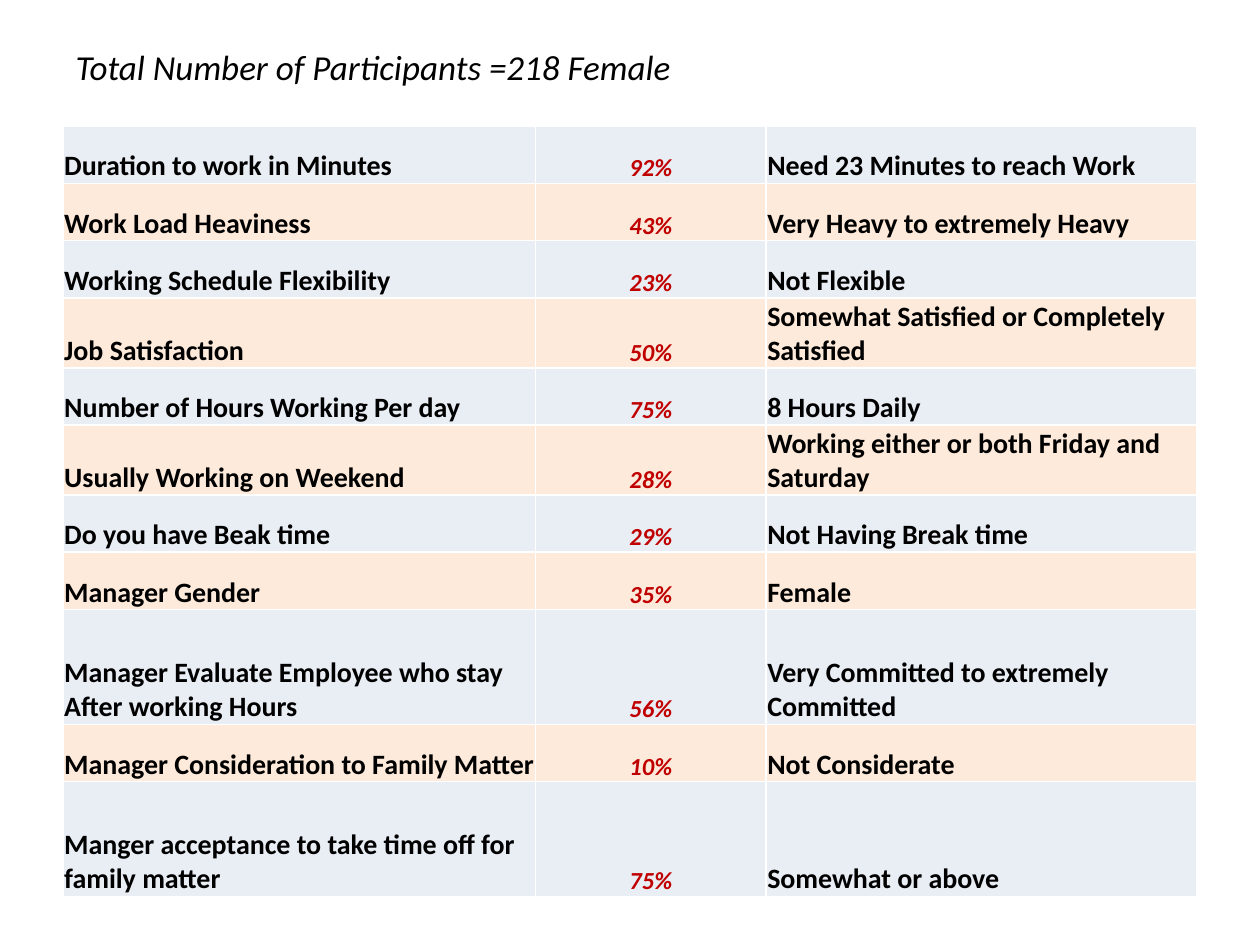
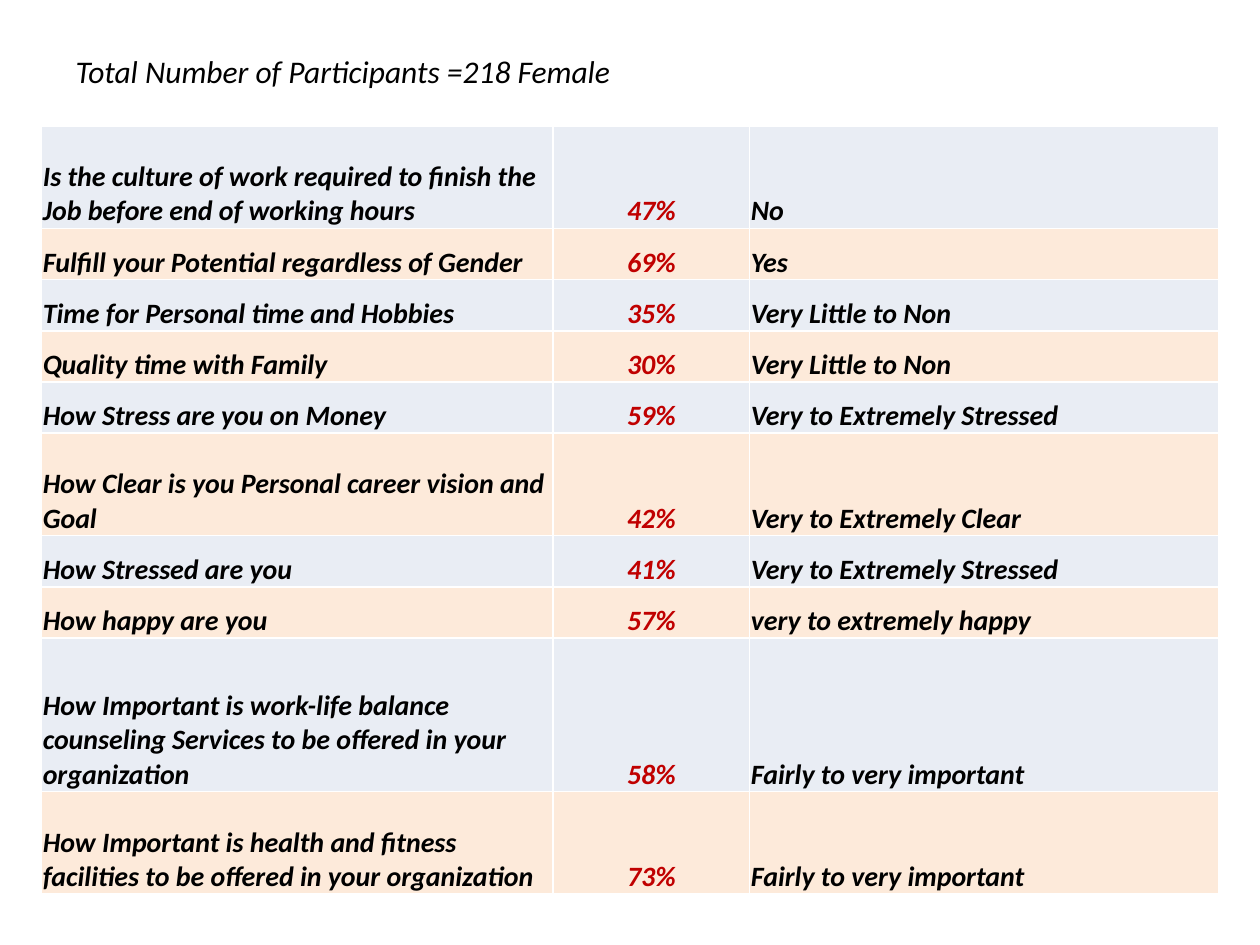
from dataclasses import dataclass

from lxml.etree import SubElement
from pptx import Presentation
from pptx.dml.color import RGBColor
from pptx.enum.text import MSO_ANCHOR, MSO_AUTO_SIZE, PP_ALIGN
from pptx.oxml.ns import qn
from pptx.util import Inches, Pt


@dataclass(frozen=True)
class Theme:
    font: str = "Calibri"
    ink: str = "000000"
    rate: str = "C00000"
    line: str = "FFFFFF"
    bands: tuple = ("E9EDF4", "FDEADA")
    body: int = 16


theme = Theme()


def style(para, size, color, bold, slant, align):
    para.alignment = align
    for run in para.runs:
        font = run.font
        font.name, font.size = theme.font, Pt(size)
        font.bold, font.italic = bold, slant
        font.color.rgb = RGBColor.from_string(color)


def border(cell):
    props = cell._tc.get_or_add_tcPr()
    for side in ("lnL", "lnR", "lnT", "lnB"):
        line = SubElement(props, qn(f"a:{side}"), w=str(Pt(1)))
        fill = SubElement(line, qn("a:solidFill"))
        SubElement(fill, qn("a:srgbClr"), val=theme.line)


# Each row: height in row units, topic, share, answer
work = [
    (1, "Duration to work in Minutes", "92%", "Need 23 Minutes to reach Work"),
    (1, "Work Load Heaviness", "43%", "Very Heavy to extremely Heavy"),
    (1, "Working Schedule Flexibility", "23%", "Not Flexible"),
    (1, "Job Satisfaction", "50%", "Somewhat Satisfied or Completely Satisfied"),
    (1, "Number of Hours Working Per day", "75%", "8 Hours Daily"),
    (1, "Usually Working on Weekend", "28%", "Working either or both Friday and Saturday"),
    (1, "Do you have Beak time", "29%", "Not Having Break time"),
    (1, "Manager Gender", "35%", "Female"),
    (2, "Manager Evaluate Employee who stay After working Hours", "56%",
     "Very Committed to extremely Committed"),
    (1, "Manager Consideration to Family Matter", "10%", "Not Considerate"),
    (2, "Manger acceptance to take time off for family matter", "75%", "Somewhat or above"),
]
life = [
    (2, "Is the culture of work required to finish the Job before end of working hours", "47%", "No"),
    (1, "Fulfill your Potential regardless of Gender", "69%", "Yes"),
    (1, "Time for Personal time and Hobbies", "35%", "Very Little to Non"),
    (1, "Quality time with Family", "30%", "Very Little to Non"),
    (1, "How Stress are you on Money", "59%", "Very to Extremely Stressed"),
    (2, "How Clear is you Personal career vision and Goal", "42%", "Very to Extremely Clear"),
    (1, "How Stressed are you", "41%", "Very to Extremely Stressed"),
    (1, "How happy are you", "57%", "very to extremely happy"),
    (3, "How Important is work-life balance counseling Services to be offered in your organization",
     "58%", "Fairly to very important"),
    (2, "How Important is health and fitness facilities to be offered in your organization",
     "73%", "Fairly to very important"),
]

# Each page: rows, title size, title height, columns, table height, share size, slanted text
pages = [
    (work, 20, 0.45, (3.75, 1.83, 3.42), 5.92, 14, False),
    (life, 18, 0.53, (4.06, 1.56, 3.72), 6.1, 16, True),
]

deck = Presentation()
deck.slide_width, deck.slide_height = Inches(10), Inches(7.5)

for rows, size, tall, cols, depth, small, slant in pages:
    slide = deck.slides.add_slide(deck.slide_layouts[5])

    # Title
    title = slide.shapes.title
    title.left, title.top = Inches(0.5), Inches(0.3)
    title.width, title.height = Inches(9), Inches(tall)
    frame = title.text_frame
    frame.text = "Total Number of Participants =218 Female"
    frame.auto_size = MSO_AUTO_SIZE.NONE
    frame.vertical_anchor = MSO_ANCHOR.MIDDLE
    style(frame.paragraphs[0], size, theme.ink, False, True, PP_ALIGN.LEFT)

    # Table, centred across the slide
    width = Inches(sum(cols))
    table = slide.shapes.add_table(
        len(rows), len(cols), (deck.slide_width - width) // 2, Inches(1),
        width, Inches(depth)).table
    table.first_row = table.horz_banding = False
    for col, wide in zip(table.columns, cols):
        col.width = Inches(wide)
    unit = Inches(depth) // sum(row[0] for row in rows)

    # Banded rows with the share in red
    for i, (units, *texts) in enumerate(rows):
        table.rows[i].height = unit * units
        for j, text in enumerate(texts):
            cell = table.cell(i, j)
            cell.text_frame.text = text
            cell.vertical_anchor = MSO_ANCHOR.BOTTOM
            cell.margin_left = cell.margin_right = cell.margin_top = Inches(0.01)
            cell.margin_bottom = 0
            border(cell)
            cell.fill.solid()
            cell.fill.fore_color.rgb = RGBColor.from_string(theme.bands[i % 2])
            para = cell.text_frame.paragraphs[0]
            if j == 1:
                style(para, small, theme.rate, True, True, PP_ALIGN.CENTER)
            else:
                style(para, theme.body, theme.ink, True, slant, PP_ALIGN.LEFT)

deck.save("out.pptx")
